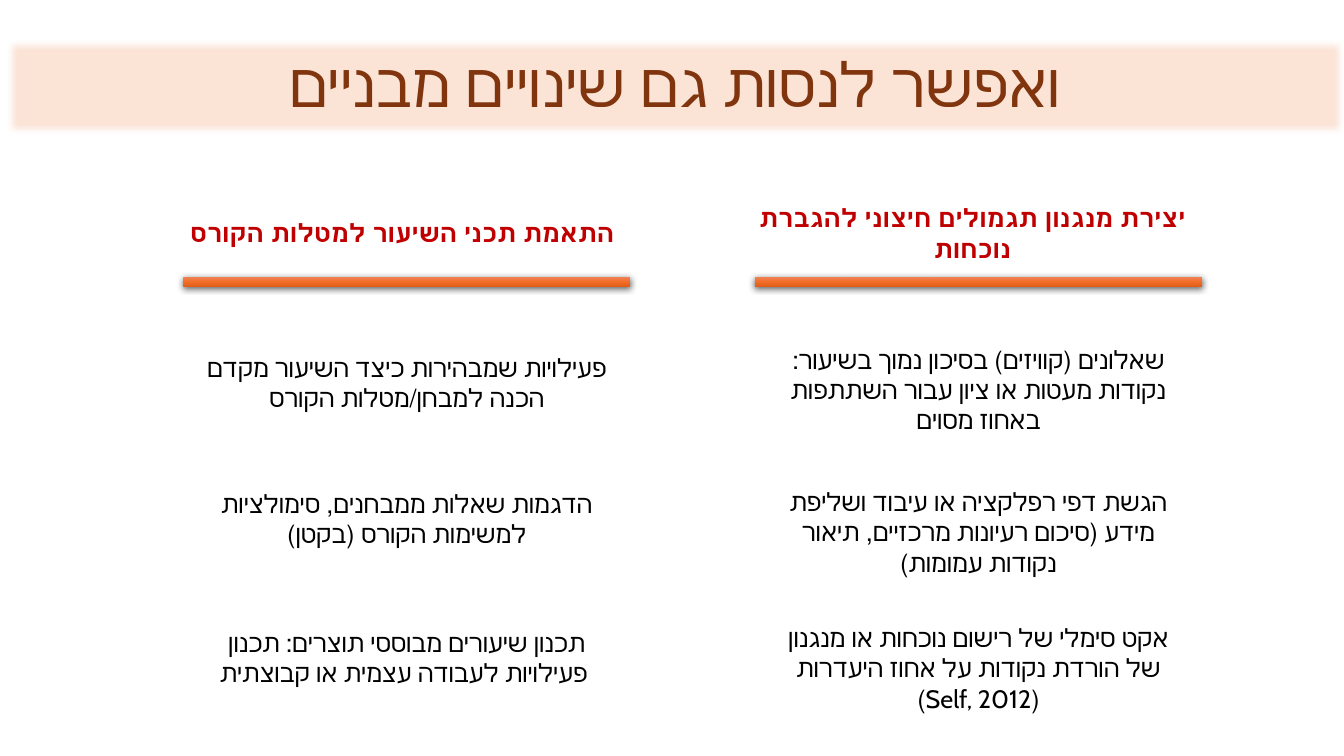
from lxml.etree import SubElement
from pptx import Presentation
from pptx.dml.color import RGBColor
from pptx.enum.shapes import MSO_SHAPE as Shape
from pptx.enum.text import MSO_ANCHOR as Anchor, PP_ALIGN as Align
from pptx.oxml.ns import qn
from pptx.util import Pt

PX = 9144  # 100 px to the inch
COLOURS = {
    "band": "FBE3D6", "title": "80350E", "heading": "C00000", "body": "000000",
    "rule_top": "ED8257", "rule_middle": "F26E29", "rule_bottom": "E25F1A",
    "shadow": "000000",
}
COLUMN_WIDTH = 443
ITEM_HEIGHT = 147
TITLE = "ואפשר לנסות גם שינויים מבניים"
# Each column: left edge, heading (left, width, text, right to left),
# items (top, text, right to left)
COLUMNS = [
    (749, (708, 513, "יצירת מנגנון תגמולים חיצוני להגברת נוכחות", True), [
        (313, "שאלונים (קוויזים) בסיכון נמוך בשיעור: נקודות מעטות או ציון עבור השתתפות באחוז מסוים", False),
        (454, "הגשת דפי רפלקציה או עיבוד ושליפת מידע (סיכום רעיונות מרכזיים, תיאור נקודות עמומות)", False),
        (589, "אקט סימלי של רישום נוכחות או מנגנון של הורדת נקודות על אחוז היעדרות (Self, 2012)", True),
    ]),
    (182, (132, 534, "התאמת תכני השיעור למטלות הקורס", False), [
        (306, "פעילויות שמבהירות כיצד השיעור מקדם הכנה למבחן/מטלות הקורס", False),
        (441, "הדגמות שאלות ממבחנים, סימולציות למשימות הקורס (בקטן)", False),
        (579, "תכנון שיעורים מבוססי תוצרים: תכנון פעילויות לעבודה עצמית או קבוצתית ", False),
    ]),
]


def colour(name):
    return RGBColor.from_string(COLOURS[name])


def emu(*lengths):
    return [length * PX for length in lengths]


def write(shape, text, font, size, tint, right_to_left, bold=False):
    """Put one centred paragraph in the shape."""
    frame = shape.text_frame
    frame.word_wrap = True
    frame.vertical_anchor = Anchor.MIDDLE
    para = frame.paragraphs[0]
    para.alignment = Align.CENTER
    if right_to_left:
        para._p.get_or_add_pPr().set("rtl", "1")
    span = para.add_run()
    span.text = text
    span.font.name = font
    span.font.size = Pt(size)
    span.font.bold = bold
    span.font.color.rgb = colour(tint)
    return para


def add_effect(shape, tag, **attributes):
    effects = SubElement(shape._element.spPr, qn("a:effectLst"))
    return SubElement(effects, qn(tag), **attributes)


def add_title(page, box):
    band = page.shapes.title
    band.left, band.top, band.width, band.height = emu(*box)
    band.fill.solid()
    band.fill.fore_color.rgb = colour("band")
    add_effect(band, "a:softEdge", rad=str(Pt(5)))
    write(band, TITLE, "Calibri", 44, "title", True).line_spacing = 0.9


def add_rule(page, box):
    """Draw the glossy bar with its shadow under a heading."""
    bar = page.shapes.add_shape(Shape.RECTANGLE, *emu(*box))
    bar.line.fill.background()
    bar.fill.gradient()
    bar.fill.gradient_angle = 270
    stops = bar.fill._fill._gradFill.find(qn("a:gsLst"))
    stops.clear()
    for position, name in ((0, "rule_top"), (50, "rule_middle"), (100, "rule_bottom")):
        stop = SubElement(stops, qn("a:gs"), pos=str(position * 1000))
        SubElement(stop, qn("a:srgbClr"), val=COLOURS[name])
    shadow = add_effect(bar, "a:outerShdw", blurRad=str(Pt(4.5)), dist=str(Pt(1.5)),
                        dir="5400000", algn="ctr", rotWithShape="0")
    tint = SubElement(shadow, qn("a:srgbClr"), val=COLOURS["shadow"])
    SubElement(tint, qn("a:alpha"), val="63000")


def add_heading(page, left, width, text, right_to_left):
    label = page.shapes.add_textbox(*emu(left, 190, width, 82))
    write(label, text, "Cabin", 18, "heading", right_to_left, bold=True)


def add_item(page, box, text, right_to_left):
    item = page.shapes.add_shape(Shape.ROUNDED_RECTANGLE, *emu(*box))
    item.shadow.inherit = False
    item.fill.background()
    item.line.fill.background()
    write(item, text, "Cabin", 18, "body", right_to_left)


def add_column(page, left, heading, items):
    add_heading(page, *heading)
    add_rule(page, (left, 275, COLUMN_WIDTH, 9))
    for top, text, right_to_left in items:
        add_item(page, (left, top, COLUMN_WIDTH, ITEM_HEIGHT), text, right_to_left)


def main():
    deck = Presentation()
    deck.slide_width, deck.slide_height = emu(1333, 750)
    page = deck.slides.add_slide(deck.slide_layouts.get_by_name("Title Only"))
    add_title(page, (7, 40, 1326, 93))
    for column in COLUMNS:
        add_column(page, *column)
    deck.save("out.pptx")


if __name__ == "__main__":
    main()
